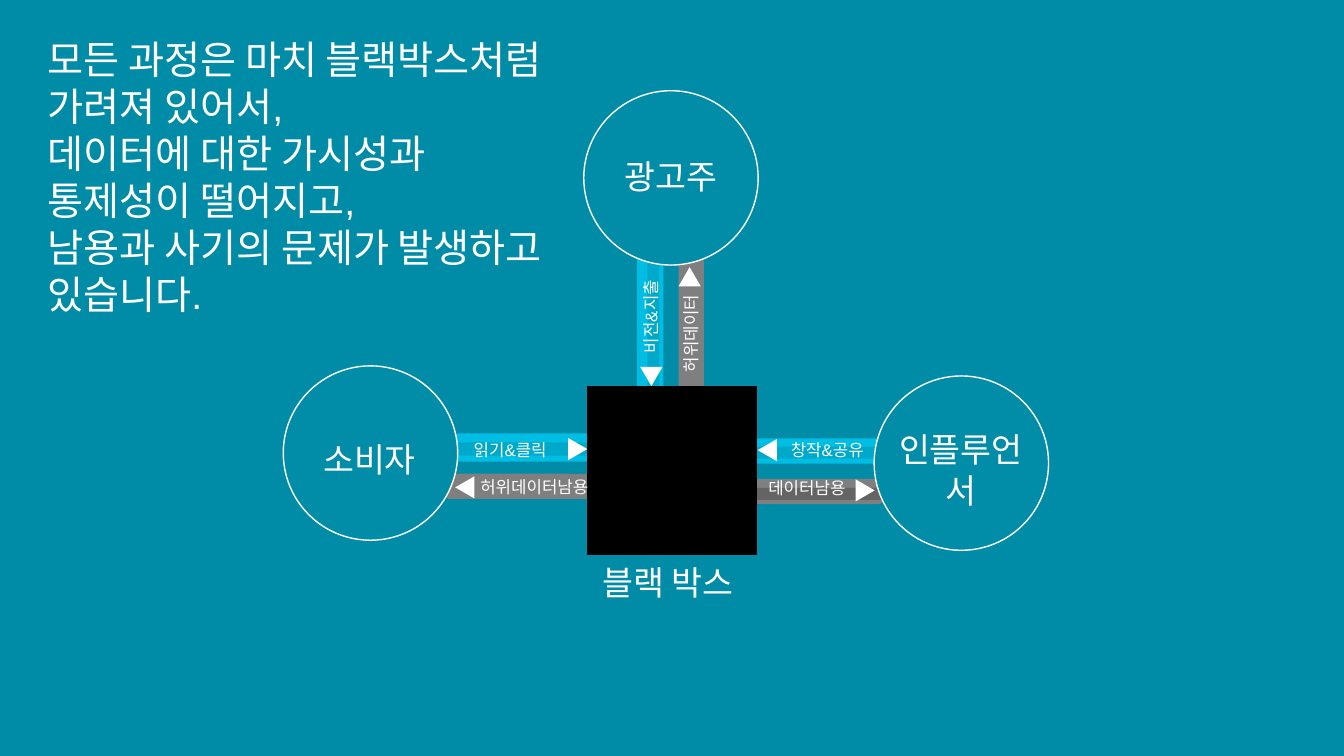
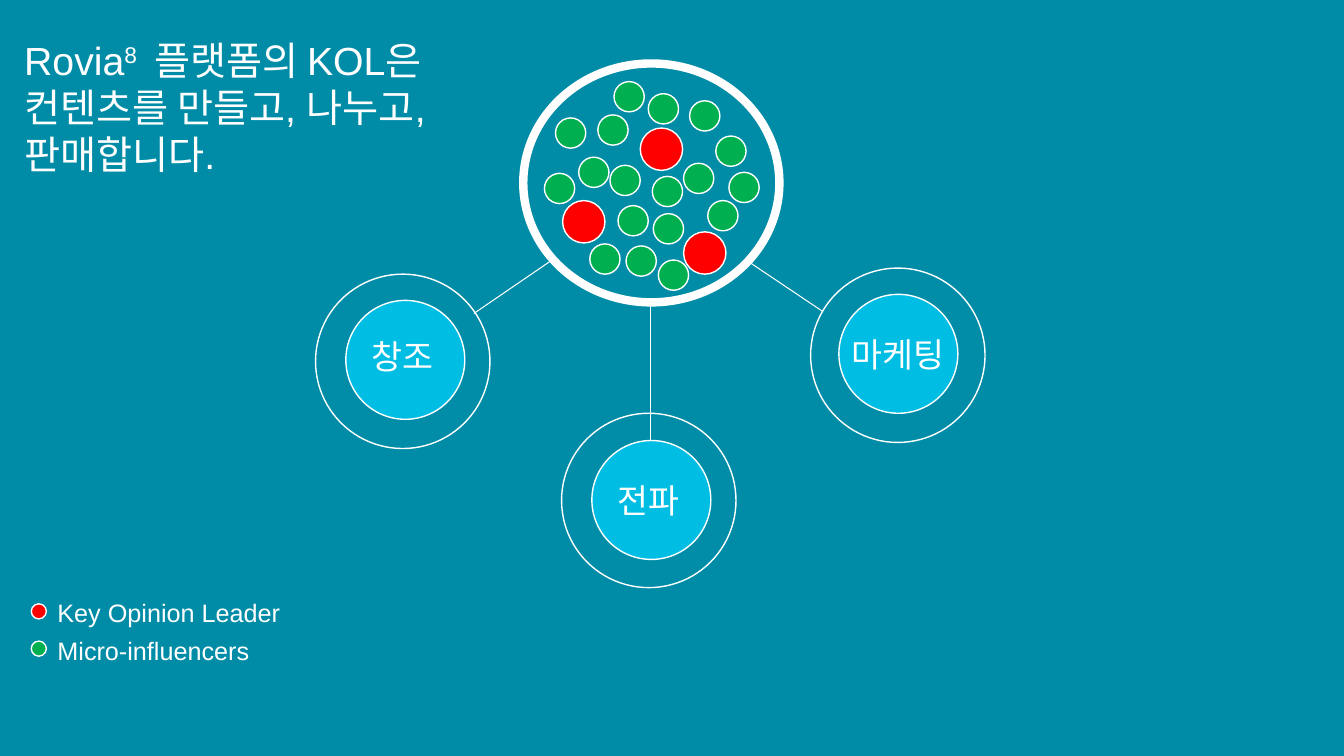
from dataclasses import dataclass
from typing import NamedTuple

from lxml.etree import SubElement as Sub
from pptx import Presentation
from pptx.dml.color import RGBColor as Rgb
from pptx.enum.shapes import MSO_CONNECTOR as Link, MSO_SHAPE as Form
from pptx.enum.text import PP_ALIGN as Align
from pptx.oxml.ns import qn
from pptx.util import Inches, Pt


@dataclass(frozen=True)
class Theme:
    back: str = "008CA7"
    ring: str = "018CA7"
    sky: str = "00BEE3"
    sea: str = "0092AE"
    gray: str = "7F7F7F"
    coal: str = "535354"
    black: str = "000000"
    white: str = "FFFFFF"
    red: str = "FF0000"
    green: str = "00B050"
    font: str = "Arial"
    head: int = 28
    name: int = 24
    key: int = 18
    note: int = 12
    thick: int = 6
    thin: float = 1
    hair: float = 0.75
    inset: float = 0.05


T = Theme()
RING, DISC, KOL, MICRO, MARK = 1.73, 1.18, 0.42, 0.3, 0.15


class Box(NamedTuple):
    x: float
    y: float
    w: float
    h: float


class Bar(NamedTuple):
    box: Box
    fill: str
    alpha: int = 100


class Label(NamedTuple):
    box: Box
    text: str
    size: int = T.name
    align: Align = Align.CENTER
    turn: int = 0


class Tip(NamedTuple):
    x: float
    y: float
    turn: int


class Dot(NamedTuple):
    x: float
    y: float
    size: float
    fill: str


# Shared drawing functions

def shape(slide, form: Form, box: Box, fill: str = "", line: str = "",
          width: float = T.thin, turn: int = 0):
    item = slide.shapes.add_shape(form, *map(Inches, box))
    item.shadow.inherit = False
    item.rotation = turn
    if fill:
        item.fill.solid()
        item.fill.fore_color.rgb = Rgb.from_string(fill)
    else:
        item.fill.background()
    if line:
        item.line.color.rgb = Rgb.from_string(line)
        item.line.width = Pt(width)
    else:
        item.line.fill.background()
    return item


def bar(slide, spec: Bar) -> None:
    item = shape(slide, Form.ROUNDED_RECTANGLE, spec.box, spec.fill)
    if spec.alpha < 100:
        tone = item.fill._xPr.find(qn("a:solidFill"))[0]
        Sub(tone, qn("a:alpha"), val=str(spec.alpha * 1000))


def dot(slide, spec: Dot) -> None:
    box = Box(spec.x, spec.y, spec.size, spec.size)
    shape(slide, Form.OVAL, box, spec.fill, T.white)


def style(run, size: int) -> None:
    run.font.name = T.font
    run.font.size = Pt(size)
    run.font.color.rgb = Rgb.from_string(T.white)


def label(slide, spec: Label):
    item = slide.shapes.add_textbox(*map(Inches, spec.box))
    item.rotation = spec.turn
    frame = item.text_frame
    frame.word_wrap = True
    frame.margin_left = frame.margin_right = Inches(T.inset)
    frame.margin_top = frame.margin_bottom = Inches(T.inset)
    frame.text = spec.text
    for para in frame.paragraphs:
        para.alignment = spec.align
        for run in para.runs:
            style(run, spec.size)
    return frame


def title(slide, box: Box, text: str):
    return label(slide, Label(box, text, T.head, Align.LEFT))


def link(slide, x1: float, y1: float, x2: float, y2: float) -> None:
    item = slide.shapes.add_connector(
        Link.STRAIGHT, *map(Inches, (x1, y1, x2, y2)))
    item.line.color.rgb = Rgb.from_string(T.white)
    item.line.width = Pt(T.hair)
    Sub(item._element.spPr, qn("a:effectLst"))


# Slide 1: the black box and the flows around it

BARS = (
    Bar(Box(4.42, 4.7, 1.66, 0.25), T.gray),
    Bar(Box(4.5, 4.3, 1.59, 0.28), T.sky),
    Bar(Box(7.36, 4.35, 1.42, 0.25), T.sky),
    Bar(Box(7.34, 4.75, 1.42, 0.25), T.gray),
    Bar(Box(6.73, 2.51, 0.25, 1.42), T.gray),
    Bar(Box(6.32, 2.48, 0.26, 1.42), T.sky),
    Bar(Box(7.34, 4.84, 1.42, 0.12), T.coal, 61),
    Bar(Box(7.33, 4.43, 1.42, 0.12), T.sea, 49),
    Bar(Box(6.42, 2.53, 0.12, 1.42), T.sea, 49),
    Bar(Box(4.5, 4.39, 1.55, 0.13), T.sea, 49),
)
PARTIES = ((2.81, 3.63), (8.67, 3.73), (5.79, 0.9))
FLOWS = (
    Label(Box(5.93, 2.99, 1.05, 0.3), "비전&지출", T.note, turn=270),
    Label(Box(6.38, 3.16, 0.94, 0.3), "허위데이터", T.note, turn=270),
    Label(Box(4.57, 4.31, 0.98, 0.3), "읽기&클릭", T.note),
    Label(Box(7.68, 4.31, 1.05, 0.3), "창작&공유", T.note),
    Label(Box(7.57, 4.69, 1.26, 0.3), "데이터남용", T.note, Align.LEFT),
    Label(Box(4.46, 4.68, 1.68, 0.5), "허위데이터남용", T.note),
)
NAMES = (
    Label(Box(5.74, 5.53, 1.84, 0.5), "블랙 박스 "),
    Label(Box(5.98, 1.5, 1.35, 0.5), "광고주"),
    Label(Box(8.83, 4.21, 1.4, 0.91), "인플루언서"),
    Label(Box(2.99, 4.31, 1.35, 0.5), "소비자"),
)
TIPS = (
    Tip(6.35, 3.64, 180), Tip(6.73, 2.65, 0), Tip(7.5, 4.37, 270),
    Tip(8.47, 4.77, 90), Tip(5.62, 4.36, 90), Tip(4.5, 4.74, 270),
)


def flow(slide) -> None:
    for spec in BARS:
        bar(slide, spec)
    for x, y in PARTIES:
        dot(slide, Dot(x, y, RING, T.ring))
    shape(slide, Form.RECTANGLE, Box(5.83, 3.83, 1.67, 1.67),
          T.black, T.black, T.hair)
    for spec in FLOWS + NAMES:
        label(slide, spec)
    for tip in TIPS:
        shape(slide, Form.ISOSCELES_TRIANGLE,
              Box(tip.x, tip.y, 0.22, 0.19), T.white, turn=tip.turn)
    title(slide, Box(0.42, 0.3, 5.18, 2.46),
          "모든 과정은 마치 블랙박스처럼 가려져 있어서,\n"
          "데이터에 대한 가시성과 통제성이 떨어지고, \v"
          "남용과 사기의 문제가 발생하고 있습니다.")


# Slide 2: the crowd of opinion leaders and its three roles

RINGS = ((5.57, 4.1), (3.13, 2.72), (8.04, 2.66))
DISCS = ((5.87, 4.37), (8.32, 2.92), (3.43, 2.98))
LINKS = ((6.45, 3.01, 6.45, 4.9), (5.49, 2.57, 4.7, 3.11),
         (7.4, 2.58, 8.16, 3.09))
ROLES = (
    Label(Box(6.01, 4.71, 0.85, 0.5), "전파"),
    Label(Box(8.32, 3.26, 1.18, 0.5), "마케팅"),
    Label(Box(3.57, 3.28, 0.85, 0.5), "창조"),
)
LEADERS = ((6.35, 1.27), (6.78, 2.3), (5.58, 1.99))
MICROS = (
    (5.93, 1.14), (6.43, 0.93), (6.84, 1), (7.1, 1.35), (6.21, 2.44),
    (5.74, 1.56), (6.05, 1.64), (5.51, 1.17), (6.09, 0.81), (5.4, 1.72),
    (6.78, 1.62), (6.13, 2.04), (6.48, 2.12), (7.02, 1.99), (7.23, 1.71),
    (6.47, 1.75), (5.85, 2.42), (6.53, 2.58),
)
KEYS = (("Key Opinion Leader", T.red), ("Micro-influencers", T.green))


def crowd(slide) -> None:
    for x, y in RINGS:
        dot(slide, Dot(x, y, RING, T.ring))
    for ends in LINKS:
        link(slide, *ends)
    for x, y in DISCS:
        dot(slide, Dot(x, y, DISC, T.sky))
    for spec in ROLES:
        label(slide, spec)
    shape(slide, Form.OVAL, Box(5.19, 0.63, 2.54, 2.37),
          line=T.white, width=T.thick)
    for spots, size, fill in ((LEADERS, KOL, T.red),
                              (MICROS, MICRO, T.green)):
        for x, y in spots:
            dot(slide, Dot(x, y, size, fill))
    # Legend
    for row, (text, fill) in enumerate(KEYS):
        y = 5.88 + row * 0.37
        label(slide, Label(Box(0.52, y, 4.56, 0.4), text, T.key, Align.LEFT))
        dot(slide, Dot(0.31, y + 0.11, MARK, fill))
    # Title with a raised figure
    frame = title(slide, Box(0.19, 0.31, 5.25, 2.46), "Rovia")
    para = frame.paragraphs[0]
    for text in ("8 ", " 플랫폼의 KOL은 컨텐츠를 만들고, 나누고, 판매합니다."):
        run = para.add_run()
        run.text = text
        style(run, T.head)
    para.runs[1].font._element.set("baseline", "30000")


def main() -> None:
    deck = Presentation()
    deck.slide_width, deck.slide_height = Inches(13.33), Inches(7.5)
    back = deck.slide_master.background.fill
    back.solid()
    back.fore_color.rgb = Rgb.from_string(T.back)
    for draw in (flow, crowd):
        draw(deck.slides.add_slide(deck.slide_layouts[6]))
    deck.save("out.pptx")


if __name__ == "__main__":
    main()
